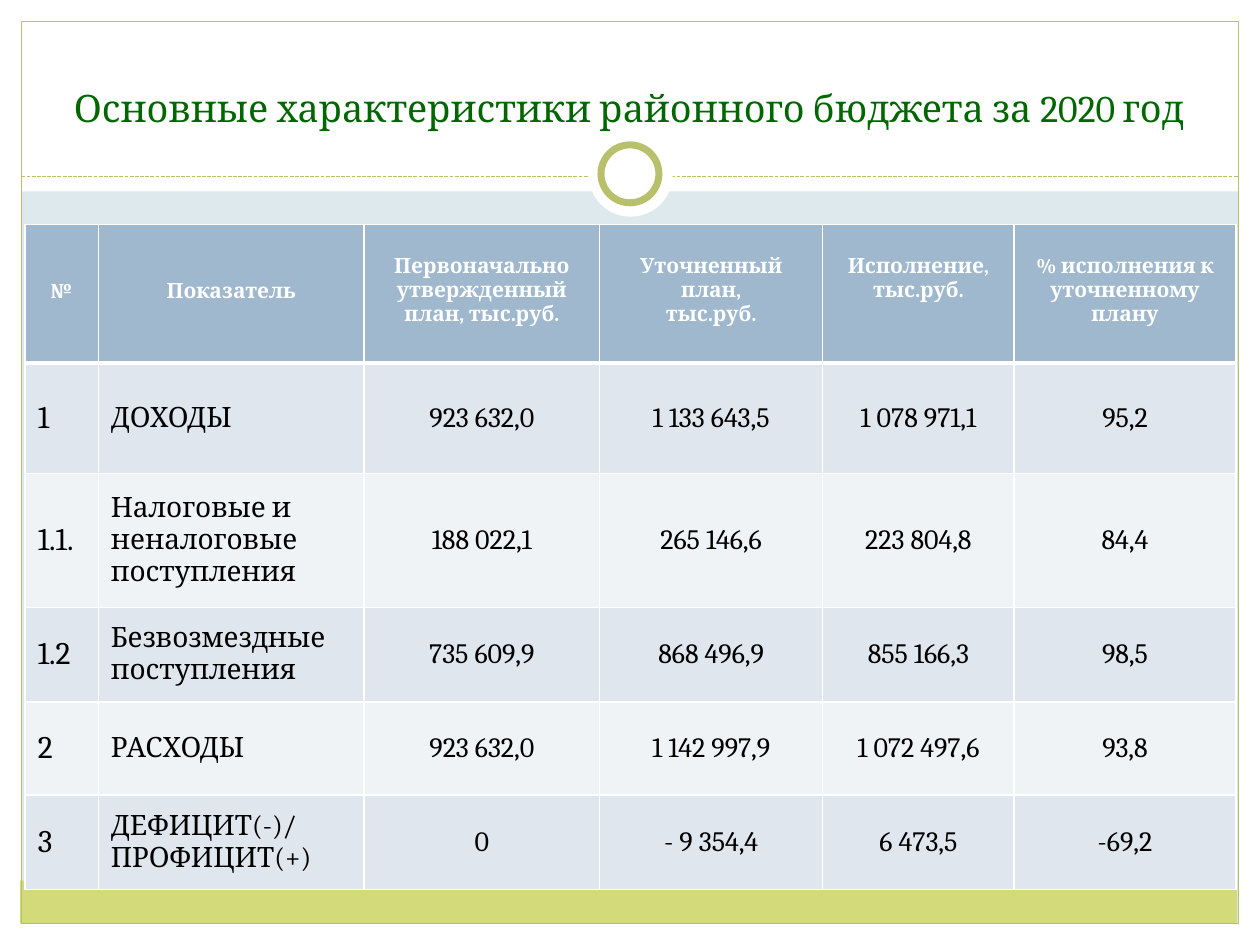
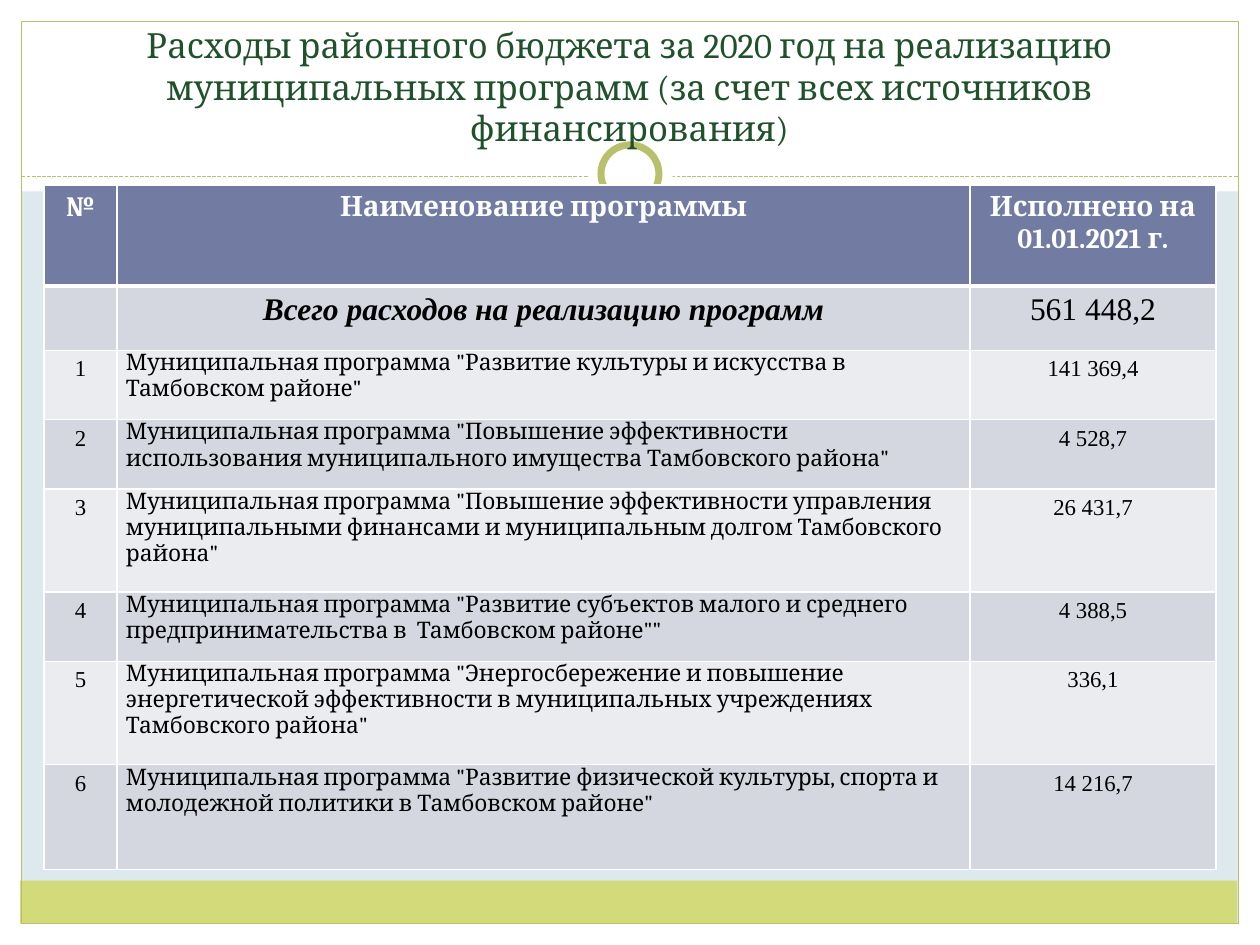
from dataclasses import dataclass
from lxml.etree import SubElement
from pptx import Presentation
from pptx.dml.color import RGBColor
from pptx.enum.dml import MSO_LINE
from pptx.enum.shapes import MSO_CONNECTOR, MSO_SHAPE
from pptx.enum.text import MSO_ANCHOR, MSO_AUTO_SIZE, PP_ALIGN
from pptx.oxml.ns import qn
from pptx.util import Inches, Pt


@dataclass(frozen=True)
class Theme:
    background: str = "DDE9EC"
    white: str = "FFFFFF"
    black: str = "000000"
    olive: str = "B9C06C"
    lime: str = "D2DA7A"
    title_green: str = "006600"
    title_forest: str = "1F512B"
    budget_header: str = "9FB8CD"
    budget_bands: tuple = ("DFE6ED", "F0F3F6")
    program_header: str = "727CA3"
    program_bands: tuple = ("D5D7E0", "EBECF0")
    serif: str = "Cambria"
    roman: str = "Times New Roman"
    budget_title_size: float = 21.6
    program_title_size: float = 19.8
    total_size: float = 18
    number_size: float = 18
    body_size: float = 16
    program_size: float = 13
    small_header_size: float = 12
    hairline: float = 0.75
    ring_line: float = 4
    grid_line: float = 1
    header_line: float = 3


def color(code):
    return RGBColor.from_string(code)


def write(frame, text, size, font, ink, bold=False, italic=False, align=PP_ALIGN.LEFT):
    for index, line in enumerate(text.split("\n")):
        para = frame.paragraphs[0] if index == 0 else frame.add_paragraph()
        para.alignment = align
        span = para.add_run()
        span.text = line
        span.font.size = Pt(size)
        span.font.name = font
        span.font.bold = bold
        span.font.italic = italic
        span.font.color.rgb = color(ink)


class BudgetDeck:
    def __init__(self, theme):
        self.theme = theme
        self.deck = Presentation()
        self.deck.slide_width = Inches(10)
        self.deck.slide_height = Inches(7.5)
        self.layout = self.deck.slide_layouts[5]
        self.page = None

    def new_page(self):
        self.page = self.deck.slides.add_slide(self.layout)

    def shape(self, kind, left, top, width, height, fill=None, line=None, weight=0):
        box = self.page.shapes.add_shape(
            kind, Inches(left), Inches(top), Inches(width), Inches(height))
        box.shadow.inherit = False
        if fill:
            box.fill.solid()
            box.fill.fore_color.rgb = color(fill)
        else:
            box.fill.background()
        if line:
            box.line.color.rgb = color(line)
            box.line.width = Pt(weight)
        else:
            box.line.fill.background()
        return box

    def dashed_line(self, left, right, top):
        rule = self.page.shapes.add_connector(
            MSO_CONNECTOR.STRAIGHT, Inches(left), Inches(top), Inches(right), Inches(top))
        rule.line.color.rgb = color(self.theme.olive)
        rule.line.width = Pt(self.theme.hairline)
        rule.line.dash_style = MSO_LINE.SQUARE_DOT
        SubElement(rule._element.spPr, qn("a:effectLst"))
        return rule

    def shared_frame(self):
        theme = self.theme
        for placeholder in list(self.layout.placeholders)[1:]:
            self.layout.shapes._spTree.remove(placeholder._element)
        self.layout.background.fill.solid()
        self.layout.background.fill.fore_color.rgb = color(theme.background)
        rectangle, oval = MSO_SHAPE.RECTANGLE, MSO_SHAPE.OVAL
        edges = [(0, 7.33, 10, 0.17), (0, 0, 10, 1.52),
                 (0, 0, 0.17, 7.5), (9.83, 0, 0.17, 7.5)]
        parts = [self.shape(rectangle, *edge, fill=theme.white) for edge in edges]
        parts += [
            self.shape(rectangle, 0.16, 6.99, 9.66, 0.34, fill=theme.lime),
            self.shape(rectangle, 0.17, 0.17, 9.66, 7.16,
                       line=theme.olive, weight=theme.hairline),
            self.dashed_line(0.17, 9.83, 1.4),
            self.shape(oval, 4.67, 1.05, 0.67, 0.67, fill=theme.white),
            self.shape(oval, 4.77, 1.15, 0.46, 0.46, fill=theme.white,
                       line=theme.olive, weight=theme.ring_line),
        ]
        for part in parts:
            self.layout.shapes._spTree.append(part._element)

    def title(self, text, height, size, ink):
        box = self.page.shapes.title
        box.left, box.top = Inches(0.33), Inches(0.25)
        box.width, box.height = Inches(9.33), Inches(height)
        frame = box.text_frame
        frame.word_wrap = True
        frame.auto_size = MSO_AUTO_SIZE.NONE
        frame.vertical_anchor = MSO_ANCHOR.BOTTOM
        write(frame, text, size, self.theme.serif, ink, align=PP_ALIGN.CENTER)

    def table(self, left, top, widths, heights, header_fill, bands):
        grid = self.page.shapes.add_table(
            len(heights), len(widths), Inches(left), Inches(top),
            Inches(sum(widths)), Inches(sum(heights))).table
        for column, width in zip(grid.columns, widths):
            column.width = Inches(width)
        for index, (row, height) in enumerate(zip(grid.rows, heights)):
            row.height = Inches(height)
            for cell in row.cells:
                self.borders(cell, index)
                cell.fill.solid()
                cell.fill.fore_color.rgb = color(
                    bands[(index - 1) % 2] if index else header_fill)
        return grid

    def borders(self, cell, row_index):
        thick_side = {0: "lnB", 1: "lnT"}.get(row_index)
        for side in ("lnL", "lnR", "lnT", "lnB"):
            weight = self.theme.header_line if side == thick_side else self.theme.grid_line
            line = SubElement(cell._tc.get_or_add_tcPr(), qn(f"a:{side}"), w=str(Pt(weight)))
            fill = SubElement(line, qn("a:solidFill"))
            SubElement(fill, qn("a:srgbClr"), val=self.theme.white)

    def header(self, grid, labels, size, top_margins):
        for cell, label, margin in zip(grid.rows[0].cells, labels, top_margins):
            cell.margin_top = Inches(margin)
            write(cell.text_frame, label, size, self.theme.serif, self.theme.white,
                  bold=True, align=PP_ALIGN.CENTER)

    def save(self):
        self.deck.save("out.pptx")


def budget_page(report):
    theme = report.theme
    report.title("Основные характеристики районного бюджета за 2020 год",
                 0.83, theme.budget_title_size, theme.title_green)
    grid = report.table(0.2, 1.78, [0.58, 2.11, 1.87, 1.77, 1.52, 1.76],
                        [1.1, 0.88, 1.06, 0.75, 0.74, 0.75],
                        theme.budget_header, theme.budget_bands)
    labels = ["№", "Показатель", "Первоначально\nутвержденный\nплан, тыс.руб.",
              "Уточненный\nплан,\nтыс.руб.", "Исполнение, тыс.руб.",
              "% исполнения к\nуточненному\nплану"]
    report.header(grid, labels, theme.small_header_size, [0.44] * 2 + [0.24] * 4)
    rows = [
        ("1", "ДОХОДЫ", "923 632,0", "1 133 643,5", "1 078 971,1", "95,2"),
        ("1.1.", "Налоговые и неналоговые\nпоступления",
         "188 022,1", "265 146,6", "223 804,8", "84,4"),
        ("1.2", "Безвозмездные поступления", "735 609,9", "868 496,9", "855 166,3", "98,5"),
        ("2", "РАСХОДЫ", "923 632,0", "1 142 997,9", "1 072 497,6", "93,8"),
        ("3", "ДЕФИЦИТ(-)/\nПРОФИЦИТ(+)", "0", "- 9 354,4", "6 473,5", "-69,2"),
    ]
    for row_index, values in enumerate(rows, 1):
        for column, value in enumerate(values):
            cell = grid.cell(row_index, column)
            cell.vertical_anchor = MSO_ANCHOR.MIDDLE
            write(cell.text_frame, value,
                  theme.body_size if column else theme.number_size,
                  theme.serif, theme.black,
                  align=PP_ALIGN.CENTER if column > 1 else PP_ALIGN.LEFT)


def programs_page(report):
    theme = report.theme
    report.title("Расходы районного бюджета за 2020 год на реализацию муниципальных "
                 "программ (за счет всех источников финансирования)",
                 0.98, theme.program_title_size, theme.title_forest)
    grid = report.table(0.35, 1.47, [0.58, 6.77, 1.95],
                        [0.8, 0.51, 0.55, 0.55, 0.82, 0.55, 0.82, 0.83],
                        theme.program_header, theme.program_bands)
    report.header(grid, ["№", "Наименование программы", "Исполнено на 01.01.2021 г."],
                  theme.body_size, [0.05] * 3)
    write(grid.cell(1, 1).text_frame, "Всего расходов на реализацию программ",
          theme.total_size, theme.roman, theme.black,
          bold=True, italic=True, align=PP_ALIGN.CENTER)
    write(grid.cell(1, 2).text_frame, "561 448,2", theme.total_size, theme.roman,
          theme.black, align=PP_ALIGN.CENTER)
    programs = [
        ("Развитие культуры и искусства в Тамбовском районе", "141 369,4"),
        ("Повышение эффективности использования муниципального имущества "
         "Тамбовского района", "4 528,7"),
        ("Повышение эффективности управления муниципальными финансами "
         "и муниципальным долгом Тамбовского района", "26 431,7"),
        ("Развитие субъектов малого и среднего предпринимательства "
         "в  Тамбовском районе\"", "4 388,5"),
        ("Энергосбережение и повышение энергетической эффективности "
         "в муниципальных учреждениях Тамбовского района", "336,1"),
        ("Развитие физической культуры, спорта и молодежной политики "
         "в Тамбовском районе", "14 216,7"),
    ]
    for number, (name, amount) in enumerate(programs, 1):
        number_cell, name_cell, amount_cell = grid.rows[number + 1].cells
        for cell, text in ((number_cell, str(number)), (amount_cell, amount)):
            write(cell.text_frame, text, theme.program_size, theme.roman, theme.black,
                  align=PP_ALIGN.CENTER)
        name_cell.margin_left = name_cell.margin_right = Inches(0.07)
        name_cell.margin_top = name_cell.margin_bottom = Inches(0)
        write(name_cell.text_frame, f'Муниципальная программа "{name}"',
              theme.program_size, theme.serif, theme.black)


def main():
    report = BudgetDeck(Theme())
    report.new_page()
    report.shared_frame()
    budget_page(report)
    report.new_page()
    programs_page(report)
    report.save()


if __name__ == "__main__":
    main()
